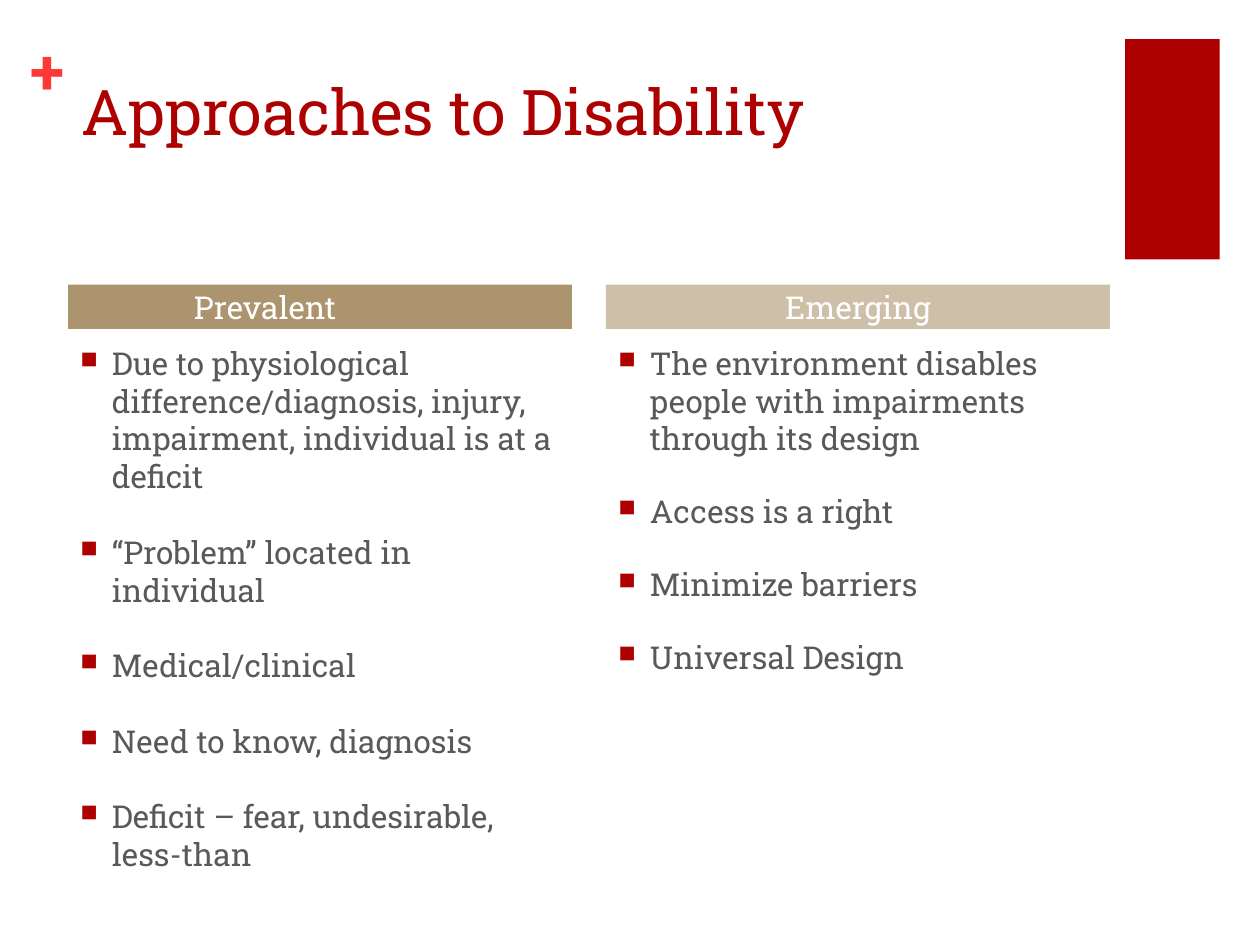
from pptx import Presentation
from pptx.dml.color import RGBColor
from pptx.enum.shapes import MSO_SHAPE as Shape
from pptx.enum.text import MSO_ANCHOR as Anchor, PP_ALIGN as Align
from pptx.oxml.ns import qn
from pptx.util import Inches, Pt
from lxml.etree import SubElement

FONT = "Roboto Slab"
RED = "AD0101"
COLUMN_WIDTH = 4
COLUMNS = [
    dict(left=0.54, heading="Prevalent", fill="AC956E", right_inset=0.97, gap=21.6, items=[
        "Due to physiological difference/diagnosis, injury, impairment, individual is at a deficit",
        "“Problem” located in individual",
        "Medical/clinical",
        "Need to know, diagnosis",
        "Deficit – fear, undesirable, less-than",
    ]),
    dict(left=4.81, heading="Emerging", fill="CDBFA8", right_inset=0.1, gap=20, items=[
        "The environment disables people with impairments through its design",
        "Access is a right",
        "Minimize barriers",
        "Universal Design",
    ]),
]


def color(value):
    """Turn a hex string into a colour."""
    return RGBColor.from_string(value)


def write(paragraph, text, size=18, fill="595959", bold=False, align=Align.LEFT):
    """Put one formatted run into a paragraph."""
    paragraph.alignment = align
    run = paragraph.add_run()
    run.text = text
    run.font.name = FONT
    run.font.size = Pt(size)
    run.font.bold = bold
    run.font.color.rgb = color(fill)


def set_insets(frame, left, top, right, bottom):
    """Set the four inner margins of a text frame."""
    frame.margin_left, frame.margin_top = Inches(left), Inches(top)
    frame.margin_right, frame.margin_bottom = Inches(right), Inches(bottom)


def add_text(slide, left, top, width, height):
    """Add a wrapping text box and return its frame."""
    box = slide.shapes.add_textbox(Inches(left), Inches(top), Inches(width), Inches(height))
    box.text_frame.word_wrap = True
    return box.text_frame


def add_block(slide, left, top, width, height, fill):
    """Add a plain filled rectangle."""
    shape = slide.shapes.add_shape(
        Shape.RECTANGLE, Inches(left), Inches(top), Inches(width), Inches(height))
    shape.shadow.inherit = False
    shape.fill.solid()
    shape.fill.fore_color.rgb = color(fill)
    shape.line.fill.background()
    return shape


def add_bullet(paragraph):
    """Give a paragraph a hanging square bullet."""
    properties = paragraph._p.get_or_add_pPr()
    properties.set("marL", str(Inches(0.25)))
    properties.set("indent", str(-Inches(0.25)))
    bullet_color = SubElement(properties, qn("a:buClr"))
    SubElement(bullet_color, qn("a:srgbClr")).set("val", RED)
    SubElement(properties, qn("a:buSzPct")).set("val", "75000")
    SubElement(properties, qn("a:buChar")).set("char", "■")


def add_column(slide, left, heading, fill, right_inset, gap, items):
    """Add a heading bar with its bullet list below."""
    frame = add_block(slide, left, 2.26, COLUMN_WIDTH, 0.35, fill).text_frame
    frame.word_wrap = True
    frame.vertical_anchor = Anchor.MIDDLE
    set_insets(frame, 0.1, 0, right_inset, 0)
    write(frame.paragraphs[0], heading, fill="FFFFFF", align=Align.CENTER)

    frame = add_text(slide, left, 2.68, COLUMN_WIDTH, 4.02)
    for index, item in enumerate(items):
        paragraph = frame.add_paragraph() if index else frame.paragraphs[0]
        paragraph.space_before = Pt(gap if index else 0)
        add_bullet(paragraph)
        write(paragraph, item)


def main():
    """Build the slide and save it."""
    presentation = Presentation()
    presentation.slide_width, presentation.slide_height = Inches(10), Inches(7.5)
    slide = presentation.slides.add_slide(presentation.slide_layouts[6])

    add_block(slide, 8.93, 0.31, 0.75, 1.75, RED)
    plus = add_text(slide, 0.24, 0.25, 0.29, 0.61)
    plus.word_wrap = False
    set_insets(plus, 0, 0, 0, 0)
    write(plus.paragraphs[0], "+", size=36, fill="FE3737", bold=True)
    title = add_text(slide, 0.55, 0.53, 8.26, 1.22)
    write(title.paragraphs[0], "Approaches to Disability", size=36, fill=RED)
    for column in COLUMNS:
        add_column(slide, **column)

    presentation.save("out.pptx")


if __name__ == "__main__":
    main()
